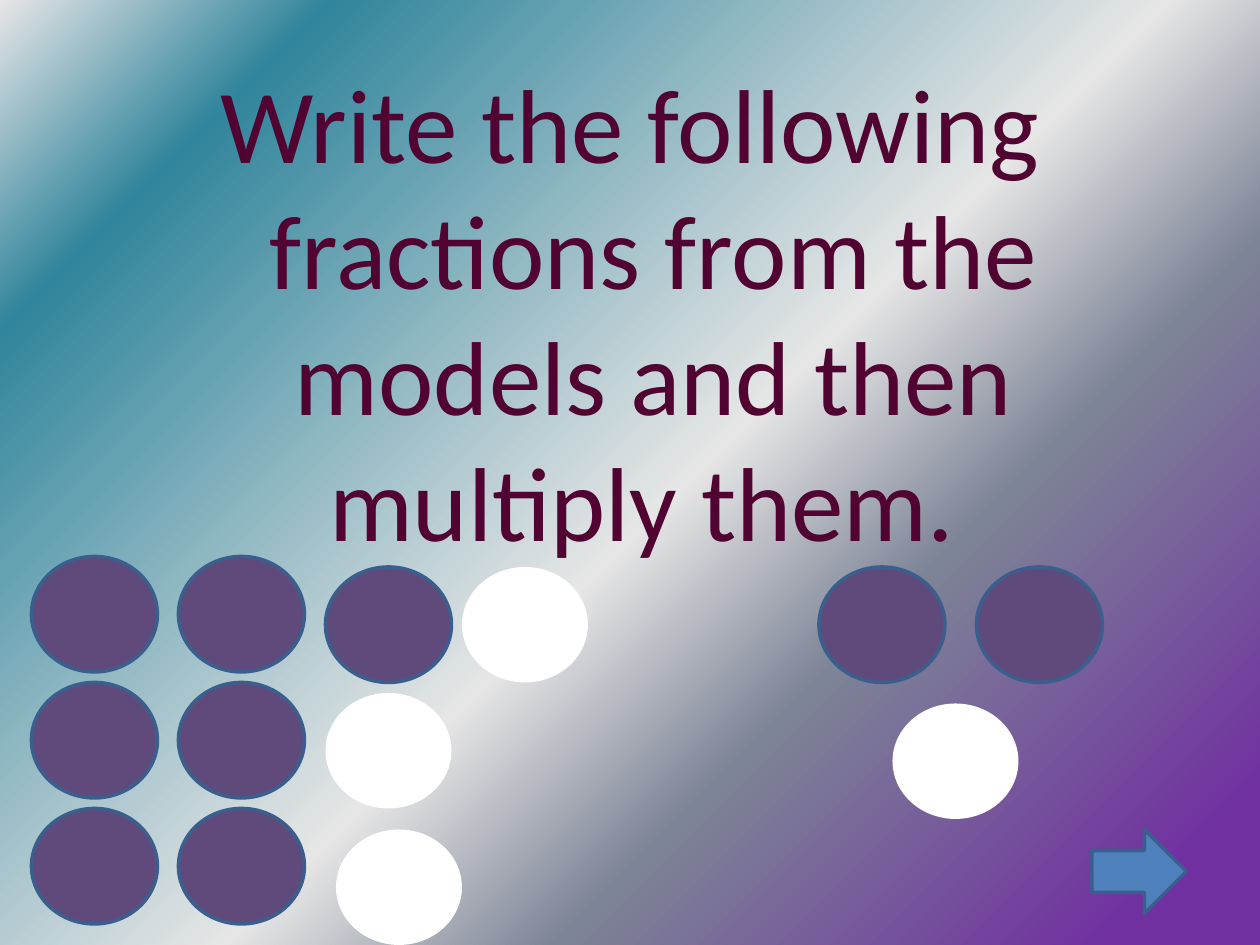
from lxml import etree
from pptx import Presentation
from pptx.dml.color import RGBColor
from pptx.enum.shapes import MSO_SHAPE as Kind
from pptx.enum.text import PP_ALIGN as Align
from pptx.oxml.ns import qn
from pptx.util import Pt

PLUM = RGBColor(0x51, 0x03, 0x31)
BLUE = RGBColor(0x4F, 0x81, 0xBD)
EDGE = RGBColor(0x3A, 0x5F, 0x8C)
GRAPE = RGBColor(0x60, 0x4A, 0x7B)
WHITE = RGBColor(0xFF, 0xFF, 0xFF)
VIOLET = RGBColor(0x70, 0x30, 0xA0)
SLATE = RGBColor(0x7D, 0x84, 0x96)
SILVER = RGBColor(0xE6, 0xE6, 0xE6)
TEAL = RGBColor(0x31, 0x85, 0x9C)

STOPS = [(0, VIOLET), (7, VIOLET), (32, SLATE), (47, SILVER), (85, TEAL), (100, SILVER)]
FULL = [(x, y) for y in (318, 390, 462) for x in (18, 102)]
FULL += [(186, 324), (468, 324), (558, 324)]
EMPTY = [(264, 324), (186, 396), (192, 474), (510, 402)]


def paint(slide):
    """Fill the background with a gradient centred on the lower right corner."""
    slide.background.fill.gradient()
    grad = slide.element.find(".//" + qn("a:gradFill"))
    for child in list(grad):
        grad.remove(child)
    stops = etree.SubElement(grad, qn("a:gsLst"))
    for pos, color in STOPS:
        stop = etree.SubElement(stops, qn("a:gs"), pos=str(pos * 1000))
        etree.SubElement(stop, qn("a:srgbClr"), val=str(color))
    way = etree.SubElement(grad, qn("a:path"), path="circle")
    etree.SubElement(way, qn("a:fillToRect"), l="100000", t="100000")
    etree.SubElement(grad, qn("a:tileRect"), r="-100000", b="-100000")


def write(slide, text):
    """Add the centred task text with its hanging indent."""
    frame = slide.shapes.add_textbox(Pt(36), Pt(30), Pt(648), Pt(482)).text_frame
    frame.word_wrap = True
    para = frame.paragraphs[0]
    para.text = text
    para.alignment = Align.CENTER
    para.space_before = Pt(12)
    font = para.font
    font.name, font.size = "Calibri", Pt(60)
    font.color.rgb = PLUM
    props = para._p.get_or_add_pPr()
    props.set("marL", str(Pt(27)))
    props.set("indent", str(Pt(-27)))


def draw(slide, kind, box, color, edge=None):
    """Add a filled shape, outlined if an edge colour is given."""
    shape = slide.shapes.add_shape(kind, *map(Pt, box))
    shape.shadow.inherit = False
    shape.fill.solid()
    shape.fill.fore_color.rgb = color
    if edge is None:
        shape.line.fill.background()
    else:
        shape.line.color.rgb = edge
        shape.line.width = Pt(2)


def main():
    """Build and save the slide."""
    deck = Presentation()
    deck.slide_width, deck.slide_height = Pt(720), Pt(540)
    slide = deck.slides.add_slide(deck.slide_layouts[6])
    paint(slide)
    write(slide, "Write the following fractions from the models and then multiply them. ")
    draw(slide, Kind.RIGHT_ARROW, (624, 474, 54, 48), BLUE, EDGE)
    for spots, color, edge in ((FULL, GRAPE, EDGE), (EMPTY, WHITE, None)):
        for x, y in spots:
            draw(slide, Kind.OVAL, (x, y, 72, 66), color, edge)
    deck.save("out.pptx")


if __name__ == "__main__":
    main()
